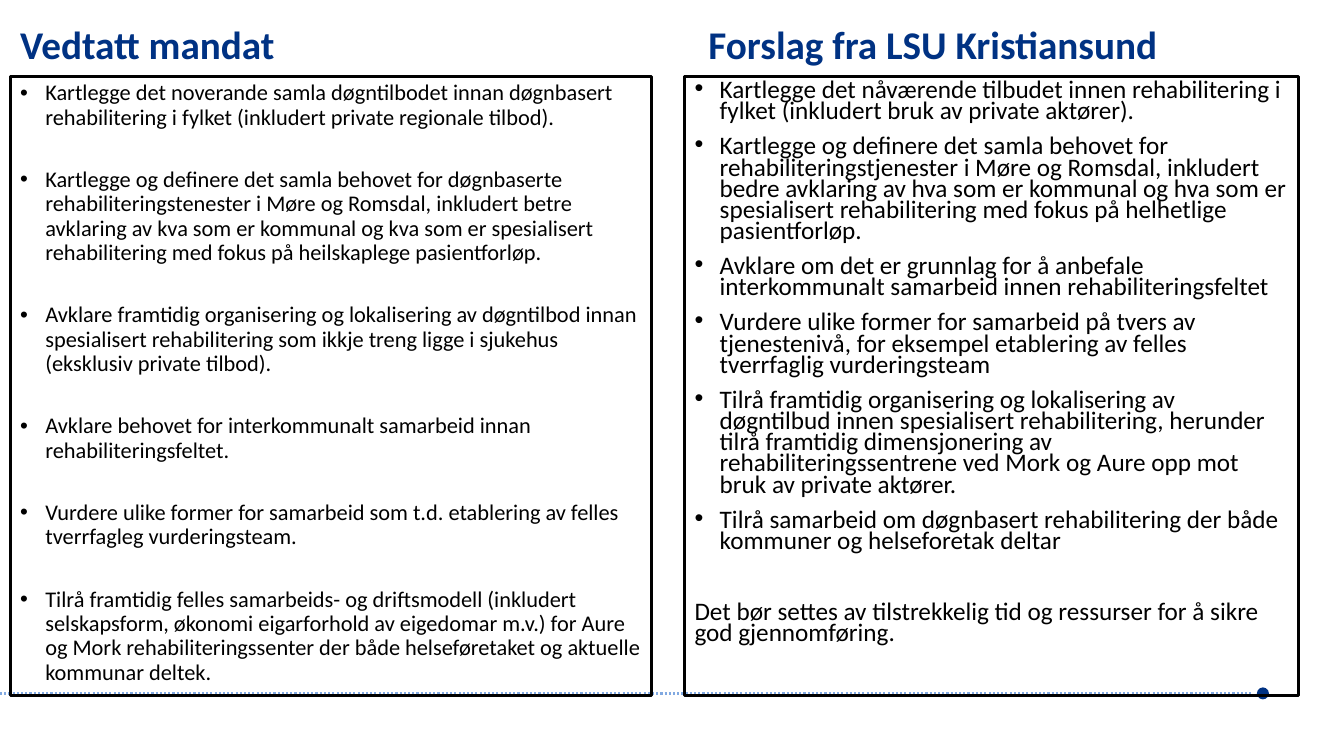
from lxml.etree import SubElement
from pptx import Presentation
from pptx.dml.color import RGBColor
from pptx.enum.dml import MSO_LINE
from pptx.enum.shapes import MSO_CONNECTOR, MSO_SHAPE
from pptx.enum.text import MSO_ANCHOR, MSO_AUTO_SIZE, PP_ALIGN
from pptx.oxml.ns import qn
from pptx.util import Pt

hues = {"navy": "003283", "sky": "81A9E1", "ink": "000000"}


def tint(name):
    return RGBColor.from_string(hues[name])


def place(shape, left, top, width, height):
    spots = {"left": left, "top": top, "width": width, "height": height}
    for key, value in spots.items():
        setattr(shape, key, Pt(value))


deck = Presentation()
deck.slide_width, deck.slide_height = Pt(960), Pt(540)
slide = deck.slides.add_slide(deck.slide_layouts[3])
title, left, right = slide.placeholders

rule = slide.shapes.add_connector(
    MSO_CONNECTOR.STRAIGHT, Pt(0), Pt(495.4), Pt(894.2), Pt(495.4))
rule.line.color.rgb = tint("sky")
rule.line.width = Pt(1.5)
rule.line.dash_style = MSO_LINE.ROUND_DOT
SubElement(rule.element.spPr, qn("a:effectLst"))

dot = slide.shapes.add_shape(
    MSO_SHAPE.OVAL, Pt(897.8), Pt(491), Pt(8.6), Pt(8.6))
dot.shadow.inherit = False
dot.fill.solid()
dot.fill.fore_color.rgb = tint("navy")
dot.line.fill.background()

for mark in (rule, dot):
    title.element.addprevious(mark.element)

label = slide.shapes.add_textbox(Pt(499), Pt(10.8), Pt(371.5), Pt(45.4))
place(title, 7.2, 1.4, 313.9, 64.1)
heads = [(title, "Vedtatt mandat"), (label, "Forslag fra LSU Kristiansund")]
head_font = {"name": "Calibri", "size": Pt(28), "bold": True}
for shape, words in heads:
    frame = shape.text_frame
    frame.text = words
    frame.word_wrap = True
    frame.auto_size = MSO_AUTO_SIZE.NONE
    frame.vertical_anchor = MSO_ANCHOR.MIDDLE
    para = frame.paragraphs[0]
    para.alignment = PP_ALIGN.LEFT
    para.line_spacing = 0.9
    para.font.color.rgb = tint("navy")
    for key, value in head_font.items():
        setattr(para.font, key, value)

old = [
    "Kartlegge det noverande samla døgntilbodet innan døgnbasert rehabilitering i fylket (inkludert private regionale tilbod).",
    "Kartlegge og definere det samla behovet for døgnbaserte rehabiliteringstenester i Møre og Romsdal, inkludert betre avklaring av kva som er kommunal og kva som er spesialisert rehabilitering med fokus på heilskaplege pasientforløp.",
    "Avklare framtidig organisering og lokalisering av døgntilbod innan spesialisert rehabilitering som ikkje treng ligge i sjukehus (eksklusiv private tilbod).",
    "Avklare behovet for interkommunalt samarbeid innan rehabiliteringsfeltet.",
    "Vurdere ulike former for samarbeid som t.d. etablering av felles tverrfagleg vurderingsteam.",
    "Tilrå framtidig felles samarbeids- og driftsmodell (inkludert selskapsform, økonomi eigarforhold av eigedomar m.v.) for Aure og Mork rehabiliteringssenter der både helseføretaket og aktuelle kommunar deltek.",
]
new = [
    "Kartlegge det nåværende tilbudet innen rehabilitering i fylket (inkludert bruk av private aktører).",
    "Kartlegge og definere det samla behovet for rehabiliteringstjenester i Møre og Romsdal, inkludert bedre avklaring av hva som er kommunal og hva som er spesialisert rehabilitering med fokus på helhetlige pasientforløp.",
    "Avklare om det er grunnlag for å anbefale interkommunalt samarbeid innen rehabiliteringsfeltet",
    "Vurdere ulike former for samarbeid på tvers av tjenestenivå, for eksempel etablering av felles tverrfaglig vurderingsteam",
    "Tilrå framtidig organisering og lokalisering av døgntilbud innen spesialisert rehabilitering, herunder tilrå framtidig dimensjonering av rehabiliteringssentrene ved Mork og Aure opp mot bruk av private aktører.",
    "Tilrå samarbeid om døgnbasert rehabilitering der både kommuner og helseforetak deltar",
]
close = "Det bør settes av tilstrekkelig tid og ressurser for å sikre god gjennomføring."

lists = [
    (left, 7.2, 457.9, old, "", 16, 0.9, 27.5),
    (right, 488.9, 438.5, new, close, 18, 0.7, 10),
]
for box, start, width, points, final, size, pitch, gap in lists:
    place(box, start, 54.7, width, 442.1)
    box.line.color.rgb = tint("ink")
    box.line.width = Pt(2.25)
    frame = box.text_frame
    frame.word_wrap = True
    frame.auto_size = MSO_AUTO_SIZE.NONE
    frame.vertical_anchor = MSO_ANCHOR.TOP
    texts = points + [final] if final else points
    frame.text = "\n".join(texts)
    for spot, para in enumerate(frame.paragraphs):
        last = spot == len(points)
        props = para._p.get_or_add_pPr()
        props.set("marL", str(0 if last else Pt(18)))
        props.set("indent", str(0 if last else -Pt(18)))
        if last:
            SubElement(props, qn("a:buNone"))
        else:
            SubElement(props, qn("a:buFont")).set("typeface", "Arial")
            SubElement(props, qn("a:buChar")).set("char", "•")
        space = 35.4 if last else gap if spot else 0
        form = {"line_spacing": pitch, "space_before": Pt(space),
                "space_after": Pt(0), "alignment": PP_ALIGN.LEFT}
        for key, value in form.items():
            setattr(para, key, value)
        para.font.name = "Calibri"
        para.font.size = Pt(size)
        para.font.color.rgb = tint("ink")

deck.save("out.pptx")
